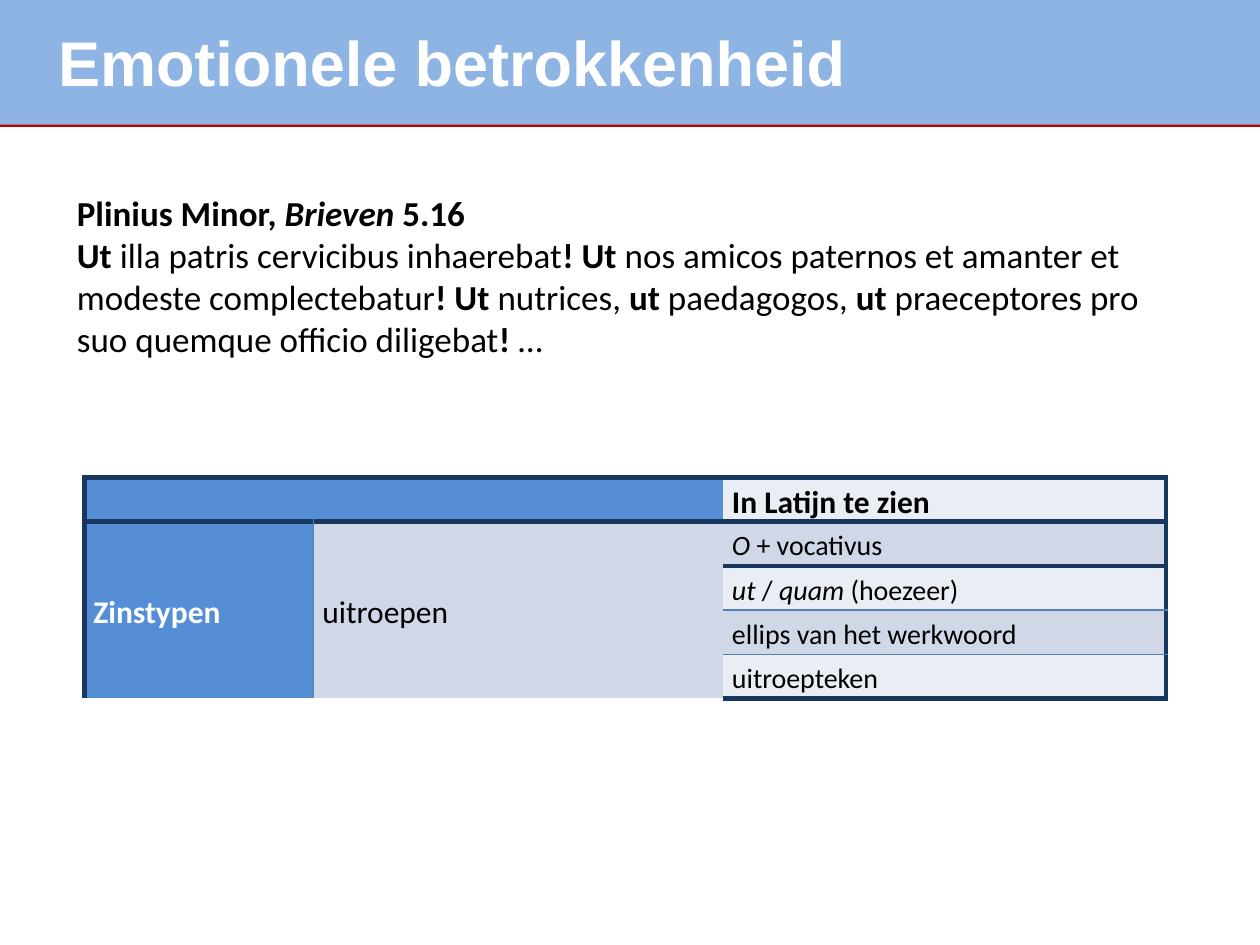
from lxml.etree import SubElement
from pptx import Presentation
from pptx.dml.color import RGBColor
from pptx.enum.shapes import MSO_CONNECTOR, MSO_SHAPE
from pptx.enum.text import MSO_ANCHOR, MSO_AUTO_SIZE, PP_ALIGN
from pptx.oxml.ns import qn
from pptx.util import Pt

COLORS = {
    "band": "8EB4E3", "rule": "C00000", "white": "FFFFFF", "black": "000000",
    "label": "558ED5", "dark": "D0D8E8", "light": "E9EDF4",
    "frame": "17375E", "inner": "4F81BD",
}
THICK, THIN, HAIR = ("frame", 3), ("inner", 1), ("inner", 0.5)

# Body text: (text, style) with b = bold, i = italic
PASSAGE = [
    [("Plinius Minor, ", "b"), ("Brieven ", "bi"), ("5.16", "b")],
    [("Ut ", "b"), ("illa patris cervicibus inhaerebat", ""), ("! Ut", "b"),
     (" nos amicos paternos et amanter et modeste complectebatur", ""),
     ("! Ut ", "b"), ("nutrices, ", ""), ("ut ", "b"), ("paedagogos, ", ""),
     ("ut ", "b"), ("praeceptores pro suo quemque officio diligebat", ""),
     ("! ", "b"), ("…", "")],
]

# Table
COLUMN_WIDTHS = [131, 234, 253]
ROW_HEIGHT = 25.2
LATIN_SIGNS = [
    [("O", "i"), (" + vocativus", "")],
    [("ut", "i"), (" / ", ""), ("quam", "i"), (" (hoezeer)", "")],
    [("ellips van het werkwoord", "")],
    [("uitroepteken", "")],
]
SIGN_LINES = [THICK, THICK, THICK, THIN, HAIR, THICK]


def color(name):
    return RGBColor.from_string(COLORS[name])


def write_spans(para, spans, size, ink="black", font="Calibri"):
    for text, style in spans:
        span = para.add_run()
        span.text = text
        span.font.name = font
        span.font.size = Pt(size)
        span.font.bold = "b" in style
        span.font.italic = "i" in style
        span.font.color.rgb = color(ink)


def place_text(box, left, top, width, height, anchor):
    box.left, box.top, box.width, box.height = map(Pt, (left, top, width, height))
    frame = box.text_frame
    frame.word_wrap = True
    frame.auto_size = MSO_AUTO_SIZE.NONE
    frame.vertical_anchor = anchor
    return frame


def add_band(page):
    band = page.shapes.add_shape(MSO_SHAPE.RECTANGLE, 0, 0, Pt(720), Pt(71.3))
    band.shadow.inherit = False
    band.fill.solid()
    band.fill.fore_color.rgb = color("band")
    band.line.fill.background()
    rule = page.shapes.add_connector(
        MSO_CONNECTOR.STRAIGHT, 0, Pt(71.3), Pt(720), Pt(71.3))
    rule.line.color.rgb = color("rule")
    rule.line.width = Pt(2)
    SubElement(rule.element.spPr, qn("a:effectLst"))
    # The title lies in front of the band
    for shape in (rule, band):
        page.shapes.title.element.addprevious(shape.element)


def fill_title(title):
    frame = place_text(title, 26, 9.4, 657, 51, MSO_ANCHOR.MIDDLE)
    para = frame.paragraphs[0]
    para.alignment = PP_ALIGN.LEFT
    write_spans(para, [("Emotionele betrokkenheid", "b")], 36, "white", "Arial")


def fill_body(body):
    frame = place_text(body, 36.7, 106, 629, 104, MSO_ANCHOR.TOP)
    for number, spans in enumerate(PASSAGE):
        para = frame.add_paragraph() if number else frame.paragraphs[0]
        para.space_before = Pt(0)
        properties = para._p.get_or_add_pPr()
        properties.set("marL", "0")
        properties.set("indent", "0")
        SubElement(properties, qn("a:buNone"))
        write_spans(para, spans, 20)


def set_borders(cell, **edges):
    properties = cell._tc.get_or_add_tcPr()
    for side in "LRTB":
        line = SubElement(properties, qn(f"a:ln{side}"))
        if edges[side] is None:
            SubElement(line, qn("a:noFill"))
            continue
        name, width = edges[side]
        line.set("w", str(Pt(width)))
        solid = SubElement(line, qn("a:solidFill"))
        SubElement(solid, qn("a:srgbClr"), val=COLORS[name])


def style_cell(cell, row, column):
    lines = SIGN_LINES if column == 2 else [THICK, THICK, None, None, None, THICK]
    walls = [THICK, HAIR if row else None, None, THICK]
    set_borders(cell, L=walls[column], R=walls[column + 1],
                T=lines[row], B=lines[row + 1])
    if column == 0 or (row == 0 and column == 1):
        fill = "label"
    elif column == 1:
        fill = "dark"
    else:
        fill = "dark" if row % 2 else "light"
    cell.fill.solid()
    cell.fill.fore_color.rgb = color(fill)
    cell.margin_left = cell.margin_right = Pt(5)
    cell.margin_top = cell.margin_bottom = 0
    cell.vertical_anchor = MSO_ANCHOR.MIDDLE if row else MSO_ANCHOR.TOP


def write_cell(cell, spans, size, ink="black"):
    para = cell.text_frame.paragraphs[0]
    para.line_spacing = 1.15
    write_spans(para, spans, size, ink)


def add_sign_table(page):
    rows = len(LATIN_SIGNS) + 1
    table = page.shapes.add_table(
        rows, len(COLUMN_WIDTHS), Pt(48.3), Pt(272.9),
        Pt(sum(COLUMN_WIDTHS)), Pt(rows * ROW_HEIGHT)).table
    table.first_row = table.horz_banding = False
    for column, width in enumerate(COLUMN_WIDTHS):
        table.columns[column].width = Pt(width)
    for row in range(rows):
        table.rows[row].height = Pt(ROW_HEIGHT)
        for column in range(len(COLUMN_WIDTHS)):
            style_cell(table.cell(row, column), row, column)
            # Empty and covered cells must not stretch their row
            table.cell(row, column).text_frame.paragraphs[0].font.size = Pt(16)

    table.cell(0, 0).merge(table.cell(0, 1))
    for column in (0, 1):
        table.cell(1, column).merge(table.cell(rows - 1, column))

    write_cell(table.cell(0, 2), [("In Latijn te zien", "b")], 18)
    write_cell(table.cell(1, 0), [("Zinstypen", "b")], 18, "white")
    write_cell(table.cell(1, 1), [("uitroepen", "")], 18)
    for row, spans in enumerate(LATIN_SIGNS, start=1):
        write_cell(table.cell(row, 2), spans, 16)


def main():
    deck = Presentation()
    deck.slide_width, deck.slide_height = Pt(720), Pt(540)
    page = deck.slides.add_slide(deck.slide_layouts[1])
    add_band(page)
    fill_title(page.shapes.title)
    fill_body(page.placeholders[1])
    add_sign_table(page)
    deck.save("out.pptx")


if __name__ == "__main__":
    main()
